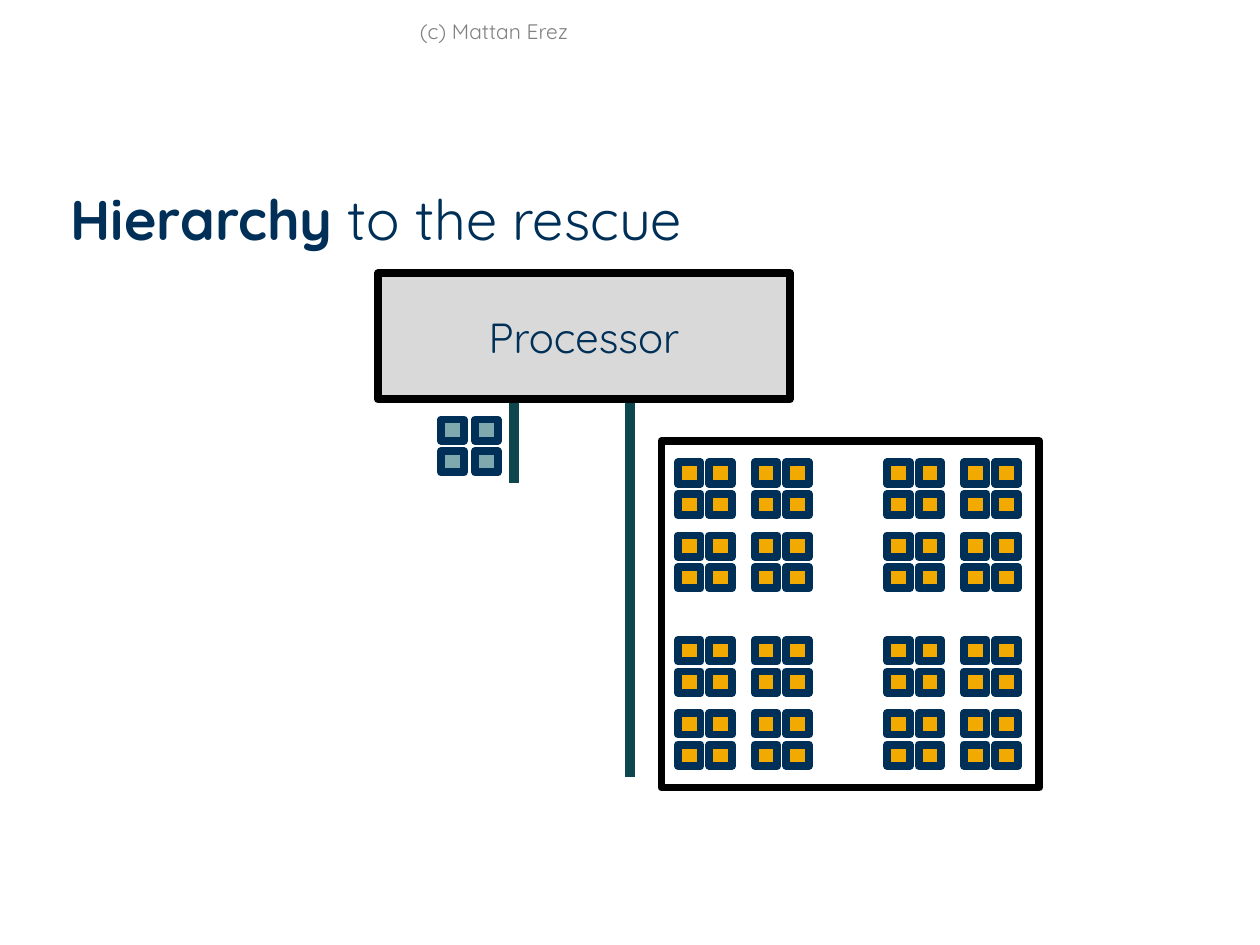
from itertools import product

from lxml.etree import SubElement
from pptx import Presentation
from pptx.dml.color import RGBColor
from pptx.enum.shapes import MSO_CONNECTOR, MSO_SHAPE
from pptx.enum.text import MSO_ANCHOR, PP_ALIGN
from pptx.oxml.ns import qn
from pptx.util import Inches, Pt

NAVY = RGBColor(0x00, 0x30, 0x57)
TEAL = RGBColor(0x0D, 0x46, 0x4D)
PALE_TEAL = RGBColor(0x7F, 0xA9, 0xAE)
GOLD = RGBColor(0xF2, 0xA9, 0x00)
LIGHT_GREY = RGBColor(0xD9, 0xD9, 0xD9)
GREY = RGBColor(0x80, 0x80, 0x80)
BLACK = RGBColor(0x00, 0x00, 0x00)

FONT = "Quicksand"
CELL = (0.18, 0.17)
NO_MARGINS = dict.fromkeys(
    ("margin_left", "margin_top", "margin_right", "margin_bottom"), 0
)


def apply_format(target, values):
    """Set each attribute in values on target."""
    for name, value in values.items():
        setattr(target, name, value)


def write_text(tf, runs, size, color, align):
    """Write (text, bold) runs as one vertically centred paragraph."""
    apply_format(tf, {"word_wrap": True, "vertical_anchor": MSO_ANCHOR.MIDDLE})
    p = tf.paragraphs[0]
    p.alignment = align
    for text, bold in runs:
        r = p.add_run()
        r.text = text
        apply_format(r.font, {"name": FONT, "size": Pt(size), "bold": bold})
        r.font.color.rgb = color


def add_box(s, box, fill, line):
    """Add an outlined rectangle, unfilled when fill is None."""
    sp = s.shapes.add_shape(MSO_SHAPE.RECTANGLE, *map(Inches, box))
    sp.shadow.inherit = False
    if fill is None:
        sp.fill.background()
    else:
        sp.fill.solid()
        sp.fill.fore_color.rgb = fill
    sp.line.color.rgb = line
    sp.line.width = Pt(4.5)
    return sp


def add_bus(s, x, top, bottom):
    """Add a vertical bus line."""
    bus = s.shapes.add_connector(
        MSO_CONNECTOR.STRAIGHT, *map(Inches, (x, top, x, bottom))
    )
    bus.line.color.rgb = TEAL
    bus.line.width = Pt(6)
    SubElement(bus._element.spPr, qn("a:effectLst"))


def nested_offsets(steps):
    """Return positions made by repeating a cell at every nesting step."""
    return sorted(sum(parts) for parts in product(*((0, step) for step in steps)))


def add_cells(s, left, top, x_steps, y_steps, fill):
    """Add a nested grid of memory cells from its top-left corner."""
    for dy, dx in product(nested_offsets(y_steps), nested_offsets(x_steps)):
        add_box(s, (left + dx, top + dy, *CELL), fill, NAVY)


def add_title(s, box):
    """Move and format the title placeholder."""
    title = s.shapes.title
    names = ("left", "top", "width", "height")
    apply_format(title, dict(zip(names, map(Inches, box))))
    apply_format(title.text_frame, NO_MARGINS)
    runs = (("Hierarchy", True), (" to the rescue", False))
    write_text(title.text_frame, runs, 32, NAVY, PP_ALIGN.LEFT)


def add_processor(s, box):
    """Add the processor with its two buses and its small local memory."""
    left, top, _, height = box
    bottom = top + height
    add_bus(s, left + 1.08, bottom, bottom + 0.66)
    add_bus(s, left + 2, bottom, bottom + 3)
    sp = add_box(s, box, LIGHT_GREY, BLACK)
    write_text(sp.text_frame, (("Processor", False),), 24, NAVY, PP_ALIGN.CENTER)
    add_cells(s, left + 0.5, bottom + 0.16, (0.27,), (0.25,), PALE_TEAL)


def add_memory(s, box):
    """Add the large memory: a frame around hierarchically grouped cells."""
    left, top = box[:2]
    add_cells(s, left + 0.13, top + 0.17,
              (0.25, 0.61, 1.66), (0.25, 0.58, 1.41), GOLD)
    add_box(s, box, None, BLACK)


def add_copyright(s, box):
    """Add the copyright line."""
    tf = s.shapes.add_textbox(*map(Inches, box)).text_frame
    write_text(tf, (("(c) Mattan Erez", False),), 12, GREY, PP_ALIGN.CENTER)


def main():
    """Build and save the slide."""
    prs = Presentation()
    prs.slide_width, prs.slide_height = Inches(10), Inches(7.5)
    s = prs.slides.add_slide(prs.slide_layouts[5])
    add_title(s, (0.56, 1.46, 9, 0.55))
    add_processor(s, (3, 2.17, 3.27, 1))
    add_memory(s, (5.25, 3.5, 3, 2.75))
    add_copyright(s, (0.92, 0, 6, 0.5))
    prs.save("out.pptx")


if __name__ == "__main__":
    main()
